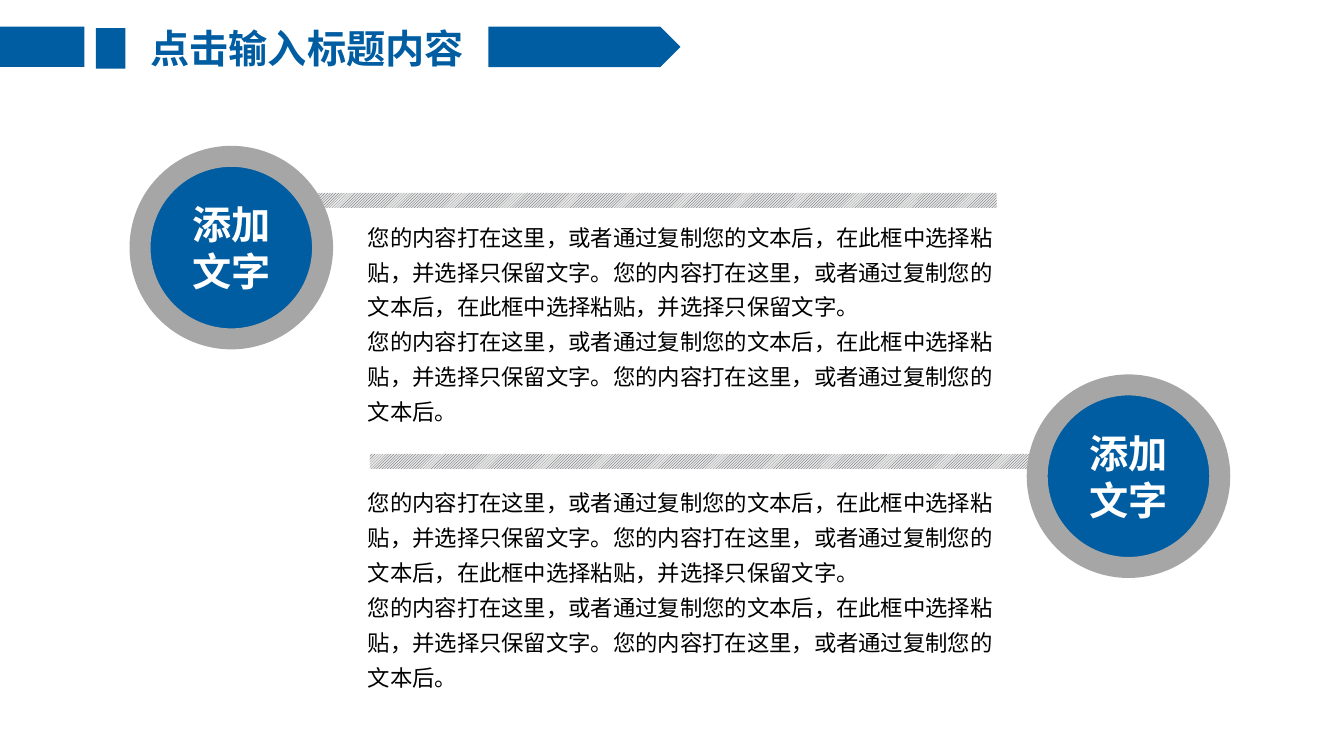
from lxml.etree import SubElement
from pptx import Presentation
from pptx.dml.color import RGBColor
from pptx.enum.dml import MSO_PATTERN
from pptx.enum.shapes import MSO_SHAPE
from pptx.enum.text import MSO_ANCHOR, MSO_AUTO_SIZE, PP_ALIGN
from pptx.oxml.ns import qn
from pptx.util import Cm, Pt

COLORS = {"blue": "005DA2", "ring": "A6A6A6", "hatch": "414455",
          "pale": "E8E8E6", "white": "FFFFFF", "black": "000000"}
FONT = "Noto Sans CJK SC"
HEADING = {"size": Pt(28), "bold": True, "name": FONT}
READING = {"size": Pt(16), "bold": False, "name": FONT}
SENTENCE = "您的内容打在这里，或者通过复制您的文本后，在此框中选择粘贴，并选择只保留文字。"
PASSAGE = [SENTENCE * 2, SENTENCE + "您的内容打在这里，或者通过复制您的文本后。"]


def color(key):
    return RGBColor.from_string(COLORS[key])


def apply(target, formats):
    for attribute, value in formats.items():
        setattr(target, attribute, value)


def place(target, left, top, width, height):
    apply(target, {"left": Cm(left), "top": Cm(top),
                   "width": Cm(width), "height": Cm(height)})


def write(frame, lines, font_formats, ink, paragraph_formats, frame_formats):
    apply(frame, {"word_wrap": True, **frame_formats})
    for index, line in enumerate(lines):
        paragraph = frame.paragraphs[0] if index == 0 else frame.add_paragraph()
        apply(paragraph, paragraph_formats)
        run = paragraph.add_run()
        run.text = line
        apply(run.font, font_formats)
        run.font.color.rgb = color(ink)
        SubElement(run.font._element, qn("a:ea"), typeface=FONT)


def add_block(slide, preset, left, top, width, height):
    block = slide.shapes.add_shape(preset, Cm(left), Cm(top), Cm(width), Cm(height))
    block.shadow.inherit = False
    block.fill.solid()
    block.fill.fore_color.rgb = color("blue")
    block.line.fill.background()
    return block


def add_header(slide, left, top, width, height):
    title = slide.shapes.title
    place(title, left + 3.18, top - 0.18, 9.12, 1.45)
    write(title.text_frame, ["点击输入标题内容"], HEADING, "blue",
          {"alignment": PP_ALIGN.CENTER},
          {"vertical_anchor": MSO_ANCHOR.MIDDLE, "auto_size": MSO_AUTO_SIZE.NONE})
    add_block(slide, MSO_SHAPE.PENTAGON, left + width - 4.84, top, 4.84, height)
    add_block(slide, MSO_SHAPE.RECTANGLE, left, top, 2.13, height)
    add_block(slide, MSO_SHAPE.RECTANGLE, left + 2.42, top + 0.04, 0.74, height)


def add_topic(slide, left, top, width, badge_on_right, bar_drop, passage_drop):
    badge_size, bar_length = 4.6, 17.4
    right = left + width
    badge_left = right - badge_size if badge_on_right else left
    bar_left = left if badge_on_right else right - bar_length
    passage_left = left - 0.3 if badge_on_right else left + 5.49

    bar = add_block(slide, MSO_SHAPE.RECTANGLE, bar_left, top + bar_drop, bar_length, 0.38)
    bar.fill.patterned()
    bar.fill.pattern = MSO_PATTERN.LIGHT_UPWARD_DIAGONAL
    bar.fill.fore_color.rgb = color("hatch")
    bar.fill.back_color.rgb = color("pale")

    badge = add_block(slide, MSO_SHAPE.OVAL, badge_left, top, badge_size, badge_size)
    badge.line.color.rgb = color("ring")
    badge.line.width = Pt(15)
    write(badge.text_frame, ["添加文字"], HEADING, "white",
          {"alignment": PP_ALIGN.CENTER}, {"vertical_anchor": MSO_ANCHOR.MIDDLE})

    passage = slide.shapes.add_textbox(
        Cm(passage_left), Cm(top + passage_drop), Cm(16.41), Cm(5.59))
    write(passage.text_frame, PASSAGE, READING, "black", {"line_spacing": 1.3},
          {"auto_size": MSO_AUTO_SIZE.SHAPE_TO_FIT_TEXT})


def main():
    deck = Presentation()
    apply(deck, {"slide_width": Cm(33.87), "slide_height": Cm(19.05)})
    slide = deck.slides.add_slide(deck.slide_layouts.get_by_name("Title Only"))
    add_header(slide, 0, 0.67, 17.15, 1.02)
    add_topic(slide, 3.53, 3.94, 21.59, False, 0.92, 1.37)
    add_topic(slide, 9.32, 9.7, 21.42, True, 1.74, 2.31)
    deck.save("out.pptx")


if __name__ == "__main__":
    main()
